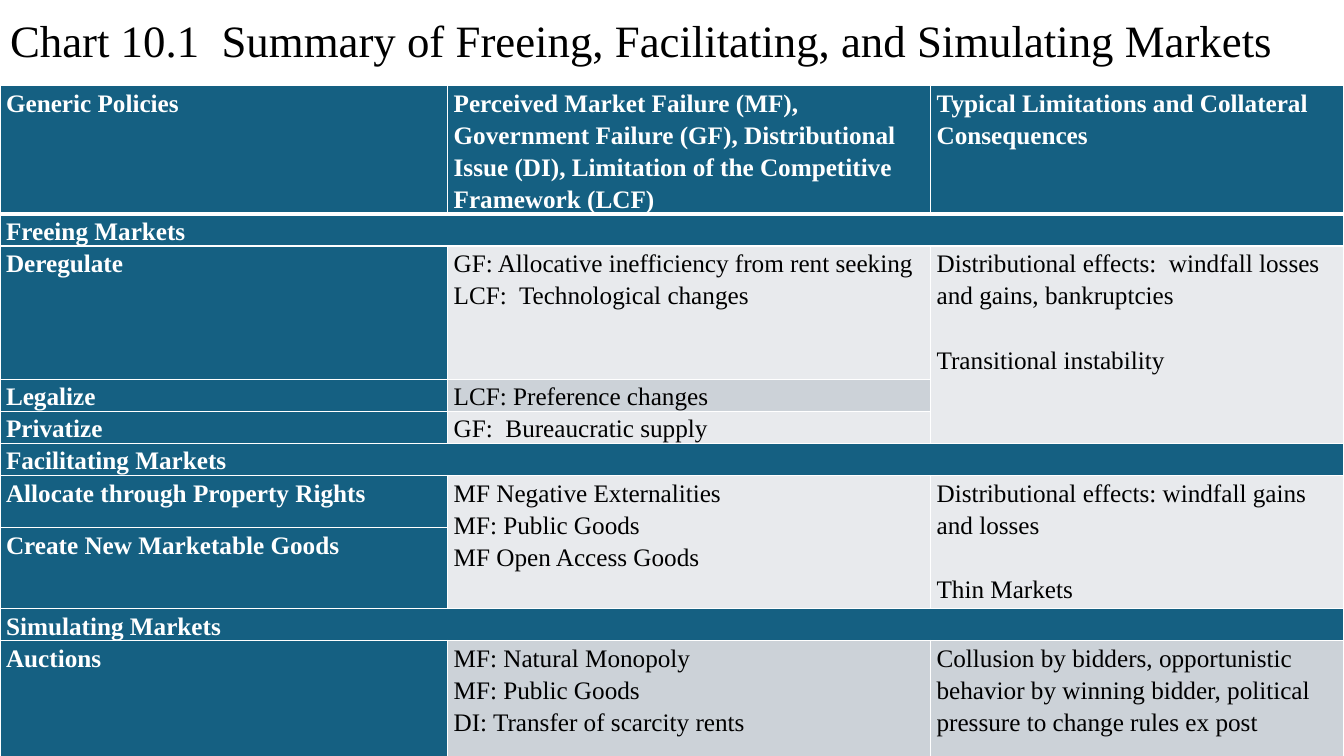
from lxml import etree
from pptx import Presentation
from pptx.dml.color import RGBColor
from pptx.enum.text import MSO_ANCHOR, MSO_AUTO_SIZE, PP_ALIGN
from pptx.oxml.ns import qn
from pptx.util import Inches, Pt

LEFT, MIDDLE, TOP = PP_ALIGN.LEFT, MSO_ANCHOR.MIDDLE, MSO_ANCHOR.TOP
NO_AUTOFIT = MSO_AUTO_SIZE.NONE
TITLE_ONLY = 5
COLORS = {"blue": "156082", "light": "E8EAED", "mid": "CCD2D8",
          "white": "FFFFFF", "black": "000000"}
COLUMN_WIDTHS = [4.44, 4.79, 4.1]

# Each row: height, then policy, failures, limitations.
# A lone policy is a section heading; None continues the cell above.
POLICY_ROWS = [
    (1.12, "Generic Policies",
     ["Perceived Market Failure (MF), Government Failure (GF), "
      "Distributional Issue (DI), Limitation of the Competitive Framework (LCF)"],
     ["Typical Limitations and Collateral Consequences"]),
    (0.28, "Freeing Markets"),
    (1.32, "Deregulate",
     ["GF: Allocative inefficiency from rent seeking", "LCF:  Technological changes"],
     ["Distributional effects:  windfall losses and gains, bankruptcies",
      "Transitional instability"]),
    (0.25, "Legalize", ["LCF: Preference changes"], None),
    (0.25, "Privatize", ["GF:  Bureaucratic supply"], None),
    (0.25, "Facilitating Markets"),
    (0.52, "Allocate through Property Rights",
     ["MF Negative Externalities", "MF: Public Goods", "MF Open Access Goods"],
     ["Distributional effects: windfall gains and losses", "Thin Markets"]),
    (0.8, "Create New Marketable Goods", None, None),
    (0.25, "Simulating Markets"),
    (1.59, "Auctions",
     ["MF: Natural Monopoly", "MF: Public Goods", "DI: Transfer of scarcity rents"],
     ["Collusion by bidders, opportunistic behavior by winning bidder, "
      "political pressure to change rules ex post"]),
]


def rgb(name):
    return RGBColor.from_string(COLORS[name])


def write_text(frame, lines, size=18, color="black", bold=False, spacing=1.15, gap=0):
    """Write one paragraph per line, with gap points between paragraphs."""
    for i, line in enumerate(lines):
        paragraph = frame.paragraphs[0] if i == 0 else frame.add_paragraph()
        paragraph.alignment = LEFT
        paragraph.line_spacing = spacing
        paragraph.space_before = Pt(gap if i else 0)
        run = paragraph.add_run()
        run.text = line
        run.font.name = "Times New Roman"
        run.font.size = Pt(size)
        run.font.bold = bold
        run.font.color.rgb = rgb(color)


class SlideBuilder:
    def __init__(self, presentation):
        self.slide = presentation.slides.add_slide(presentation.slide_layouts[TITLE_ONLY])

    def title(self, text, left, top, width, height):
        title = self.slide.shapes.title
        title.left, title.top = Inches(left), Inches(top)
        title.width, title.height = Inches(width), Inches(height)
        frame = title.text_frame
        frame.word_wrap = True
        frame.auto_size = NO_AUTOFIT
        frame.vertical_anchor = MIDDLE
        write_text(frame, [text], size=32, spacing=0.9)

    def borders(self, cell, top=1, bottom=1):
        properties = cell._tc.get_or_add_tcPr()
        widths = {"a:lnL": 1, "a:lnR": 1, "a:lnT": top, "a:lnB": bottom}
        for position, (tag, width) in enumerate(widths.items()):
            line = etree.Element(qn(tag), w=str(Pt(width)))
            fill = etree.SubElement(line, qn("a:solidFill"))
            etree.SubElement(fill, qn("a:srgbClr"), val=COLORS["white"])
            properties.insert(position, line)

    def style_cell(self, cell, row, fill):
        cell.margin_left = cell.margin_right = Inches(0.06)
        cell.margin_top = cell.margin_bottom = 0
        cell.vertical_anchor = TOP
        cell.fill.solid()
        cell.fill.fore_color.rgb = rgb(fill)
        self.borders(cell, top=3 if row == 1 else 1, bottom=3 if row == 0 else 1)

    def policy_table(self, rows, left, top):
        height = sum(row[0] for row in rows)
        table = self.slide.shapes.add_table(
            len(rows), len(COLUMN_WIDTHS), Inches(left), Inches(top),
            Inches(sum(COLUMN_WIDTHS)), Inches(height)).table
        for column, width in zip(table.columns, COLUMN_WIDTHS):
            column.width = Inches(width)

        # Cell text and colours
        starts = {}
        for r, (row_height, policy, *details) in enumerate(rows):
            table.rows[r].height = Inches(row_height)
            contents = [[policy], *(details or [None, None])]
            for c, lines in enumerate(contents):
                cell = table.cell(r, c)
                strong = r == 0 or c == 0 or not details
                band = "mid" if r % 2 else "light"
                self.style_cell(cell, r, "blue" if strong else band)
                if lines:
                    write_text(cell.text_frame, lines, bold=strong,
                               color="white" if strong else "black",
                               gap=23 if c == 2 else 0)
                    starts[c] = [r, r]
                elif details:
                    starts[c][1] = r
                    # Merge once the continued block ends
                    following = rows[r + 1]
                    if len(following) == 2 or following[c + 1]:
                        table.cell(starts[c][0], c).merge(cell)
            if not details:
                table.cell(r, 0).merge(table.cell(r, 2))


def main():
    presentation = Presentation()
    presentation.slide_width, presentation.slide_height = Inches(13.33), Inches(7.5)
    builder = SlideBuilder(presentation)
    builder.title("Chart 10.1  Summary of Freeing, Facilitating, and Simulating Markets",
                  0, 0, 13.33, 0.85)
    builder.policy_table(POLICY_ROWS, 0, 0.85)
    presentation.save("out.pptx")


if __name__ == "__main__":
    main()
